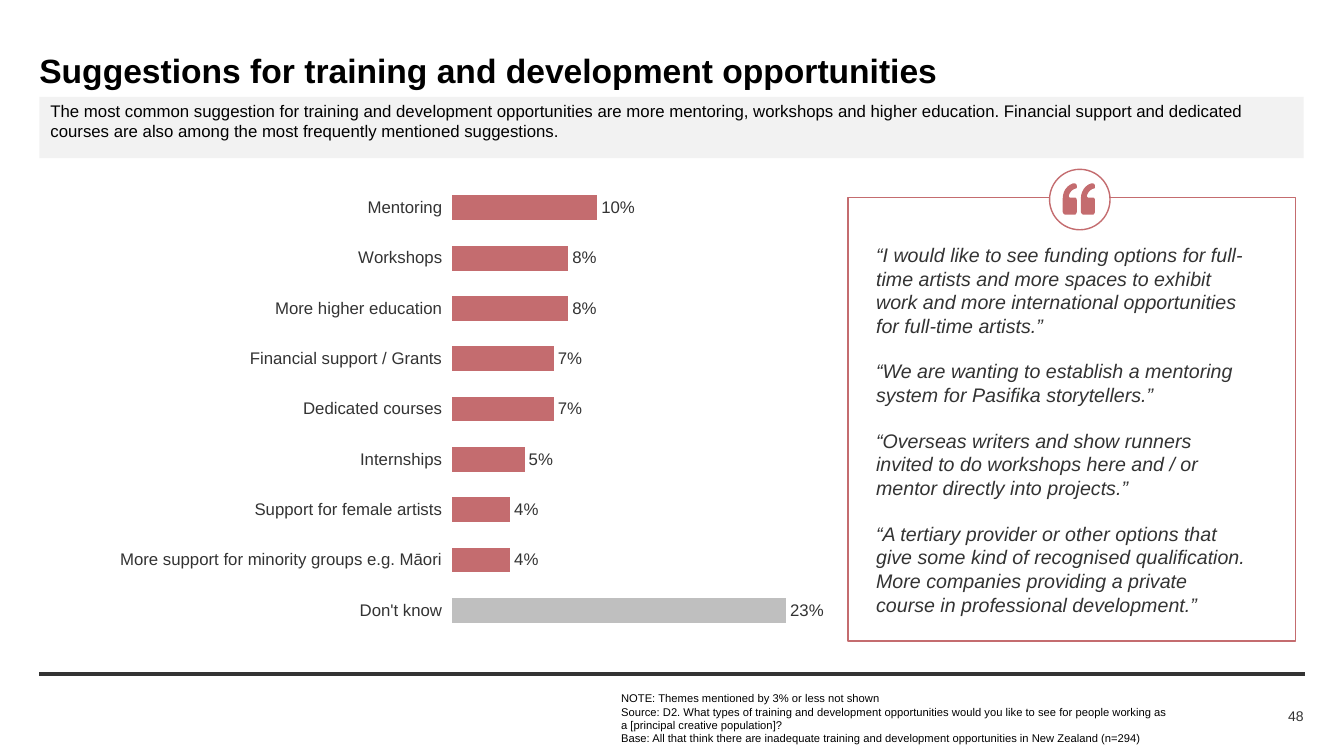
from lxml import etree
from pptx import Presentation
from pptx.chart.data import CategoryChartData
from pptx.dml.color import RGBColor
from pptx.enum.chart import XL_CHART_TYPE, XL_LABEL_POSITION, XL_TICK_LABEL_POSITION, XL_TICK_MARK
from pptx.enum.shapes import MSO_CONNECTOR, MSO_SHAPE
from pptx.enum.text import MSO_ANCHOR, MSO_AUTO_SIZE, PP_ALIGN
from pptx.oxml import parse_xml
from pptx.oxml.ns import nsdecls, qn
from pptx.util import Inches, Pt

# Content
TITLE = "Suggestions for training and development opportunities"
SUMMARY = ["The most common suggestion for training and development opportunities are more mentoring, "
           "workshops and higher education. Financial support and dedicated courses are also among "
           "the most frequently mentioned suggestions."]
NOTES = [
    "NOTE: Themes mentioned by 3% or less not shown",
    "Source: D2. What types of training and development opportunities would you like to see for "
    "people working as a [principal creative population]?\n"
    "Base: All that think there are inadequate training and development opportunities in New Zealand (n=294)",
]
SUGGESTIONS = {
    "Mentoring": 0.10,
    "Workshops": 0.08,
    "More higher education": 0.08,
    "Financial support / Grants": 0.07,
    "Dedicated courses": 0.07,
    "Internships": 0.05,
    "Support for female artists": 0.04,
    "More support for minority groups e.g. Māori": 0.04,
    "Don't know": 0.23,
}
QUOTES = [
    "“I would like to see funding options for full-time artists and more spaces to exhibit work "
    "and more international opportunities for full-time artists.”",
    "“We are wanting to establish a mentoring system for Pasifika storytellers.”",
    "“Overseas writers and show runners invited to do workshops here and / or mentor directly into projects.”",
    "“A tertiary provider or other options that give some kind of recognised qualification. "
    "More companies providing a private course in professional development.”",
]
PAGE = "48"

ROSE, GREY, BAND, DARK, BLACK, WHITE = "C46C6F", "BFBFBF", "F2F2F2", "333333", "000000", "FFFFFF"
LEFT, WIDTH = 0.39, 12.54
PLOT = {"x": 0.484, "y": 0.036, "w": 0.372, "h": 0.938}

# Quote mark in hundredths of an inch: one point is a line, three are a curve
MARK_START = (0, 28)
MARK = [
    [(0, 29), (1, 31), (3, 31)], [(12, 31)],
    [(13, 31), (14, 29), (14, 28)], [(14, 17)],
    [(14, 15), (13, 14), (12, 14)], [(7, 14)], [(6, 13)], [(6, 12)],
    [(7, 9), (9, 6), (13, 5)],
    [(14, 5), (14, 4), (14, 3)],
    [(14, 1), (13, 0), (12, 0)], [(10, 0)],
    [(4, 2), (0, 8), (0, 15)],
]
MARK_TOP, MARK_LEFTS = 1.82, (10.54, 10.72)


def rgb(value):
    return RGBColor.from_string(value)


def set_font(font, size, color=DARK, **styles):
    formats = {"name": "Arial", "size": Pt(size), "bold": False, "italic": False, **styles}
    for name, value in formats.items():
        setattr(font, name, value)
    font.color.rgb = rgb(color)


def place(sp, left, top, width, height):
    sp.left, sp.top, sp.width, sp.height = map(Inches, (left, top, width, height))


def paint(sp, fill=None, line=None):
    sp.shadow.inherit = False
    if fill:
        sp.fill.solid()
        sp.fill.fore_color.rgb = rgb(fill)
    else:
        sp.fill.background()
    if line:
        sp.line.color.rgb = rgb(line)
        sp.line.width = Pt(1)
    else:
        sp.line.fill.background()


def write(sp, lines, size, color, insets=(0, 0, 0, 0), anchor=MSO_ANCHOR.TOP,
          align=PP_ALIGN.LEFT, gap=0, **styles):
    tf = sp.text_frame
    tf.word_wrap, tf.auto_size, tf.vertical_anchor = True, MSO_AUTO_SIZE.NONE, anchor
    for side, inset in zip(("left", "top", "right", "bottom"), insets):
        setattr(tf, f"margin_{side}", Inches(inset))
    for i, line in enumerate(lines):
        p = tf.add_paragraph() if i else tf.paragraphs[0]
        p.text = line
        pPr = p._p.get_or_add_pPr()
        pPr.set("marL", "0")
        pPr.set("indent", "0")
        etree.SubElement(pPr, qn("a:buNone"))
        p.alignment, p.space_before = align, Pt(gap if i else 0)
        for r in p.runs:
            set_font(r.font, size, color, **styles)


def mark_points():
    points = [MARK_START]
    for step in MARK:
        if len(step) == 1:
            points += step
            continue
        curve = [points[-1], *step]
        for t in (k / 6 for k in range(1, 7)):
            weights = ((1 - t) ** 3, 3 * t * (1 - t) ** 2, 3 * t * t * (1 - t), t ** 3)
            points.append(tuple(sum(w * c[axis] for w, c in zip(weights, curve)) for axis in (0, 1)))
    return points


prs = Presentation()
prs.slide_width, prs.slide_height = Inches(13.33), Inches(7.5)
s = prs.slides.add_slide(prs.slide_layouts[3])
title, summary, notes = s.placeholders

# Title, summary band and notes
place(title, LEFT, 0.47, WIDTH, 0.44)
write(title, [TITLE], 24, BLACK, anchor=MSO_ANCHOR.MIDDLE, bold=True)
place(summary, LEFT, 0.96, WIDTH, 0.61)
paint(summary, BAND)
write(summary, SUMMARY, 12, BLACK, (0.11, 0.04, 0.17, 0))
place(notes, 6.16, 6.86, 5.44, 0.23)
write(notes, NOTES, 8, BLACK)

# Footer rule and page number
rule = s.shapes.add_connector(MSO_CONNECTOR.STRAIGHT, Inches(LEFT), Inches(6.69), Inches(12.94), Inches(6.69))
rule.line.color.rgb, rule.line.width = rgb(DARK), Pt(3)
etree.SubElement(rule._element.spPr, qn("a:effectLst"))
page = s.shapes.add_textbox(Inches(11.87), Inches(6.99), Inches(1.06), Inches(0.22))
write(page, [PAGE], 10, DARK, anchor=MSO_ANCHOR.MIDDLE, align=PP_ALIGN.RIGHT)

# Bar chart of suggestions
data = CategoryChartData(number_format="0%")
data.categories = list(SUGGESTIONS)
data.add_series("Series 1", list(SUGGESTIONS.values()))
chart = s.shapes.add_chart(XL_CHART_TYPE.BAR_CLUSTERED, Inches(-0.2), Inches(1.64),
                           Inches(9.68), Inches(4.79), data).chart
chart.has_legend = chart.has_title = False
set_font(chart.font, 10)

cat = chart.category_axis
cat.reverse_order, cat.has_major_gridlines = True, False
cat.major_tick_mark = cat.minor_tick_mark = XL_TICK_MARK.NONE
cat.tick_label_position = XL_TICK_LABEL_POSITION.LOW
cat.format.line.fill.background()
set_font(cat.tick_labels.font, 12)
val = chart.value_axis
val.minimum_scale, val.maximum_scale = 0, 0.25
val.has_major_gridlines = val.visible = False

plot = chart.plots[0]
plot.gap_width, plot.vary_by_categories = 102, False
bars = plot.series[0]
bars.format.fill.solid()
bars.format.fill.fore_color.rgb = rgb(ROSE)
dont_know = bars.points[len(SUGGESTIONS) - 1].format.fill
dont_know.solid()
dont_know.fore_color.rgb = rgb(GREY)
labels = bars.data_labels
labels.show_value, labels.position = True, XL_LABEL_POSITION.OUTSIDE_END
labels.number_format, labels.number_format_is_linked = "0%", False
set_font(labels.font, 12)

# Fixed plot area inside the chart
area = chart._chartSpace.chart.plotArea
for old in area.findall(qn("c:layout")):
    area.remove(old)
sizes = "".join(f'<c:{k} val="{v}"/>' for k, v in PLOT.items())
area.insert(0, parse_xml(
    f'<c:layout {nsdecls("c")}><c:manualLayout><c:layoutTarget val="inner"/>'
    f'<c:xMode val="edge"/><c:yMode val="edge"/>{sizes}</c:manualLayout></c:layout>'))

# Quote box with its badge
box = s.shapes.add_shape(MSO_SHAPE.RECTANGLE, Inches(8.41), Inches(1.96), Inches(4.44), Inches(4.4))
paint(box, line=ROSE)
write(box, QUOTES, 14, DARK, (0.28, 0.25, 0.44, 0.05), MSO_ANCHOR.MIDDLE, gap=16, italic=True)
badge = s.shapes.add_shape(MSO_SHAPE.OVAL, Inches(10.41), Inches(1.68), Inches(0.6), Inches(0.6))
paint(badge, WHITE, ROSE)

# Double quote mark
contours = [[(Inches(left + x / 100), Inches(MARK_TOP + y / 100)) for x, y in mark_points()]
            for left in MARK_LEFTS]
builder = s.shapes.build_freeform(*contours[0][0])
for i, contour in enumerate(contours):
    if i:
        builder.move_to(*contour[0])
    builder.add_line_segments(contour[1:], close=True)
paint(builder.convert_to_shape(), ROSE)

prs.save("out.pptx")
